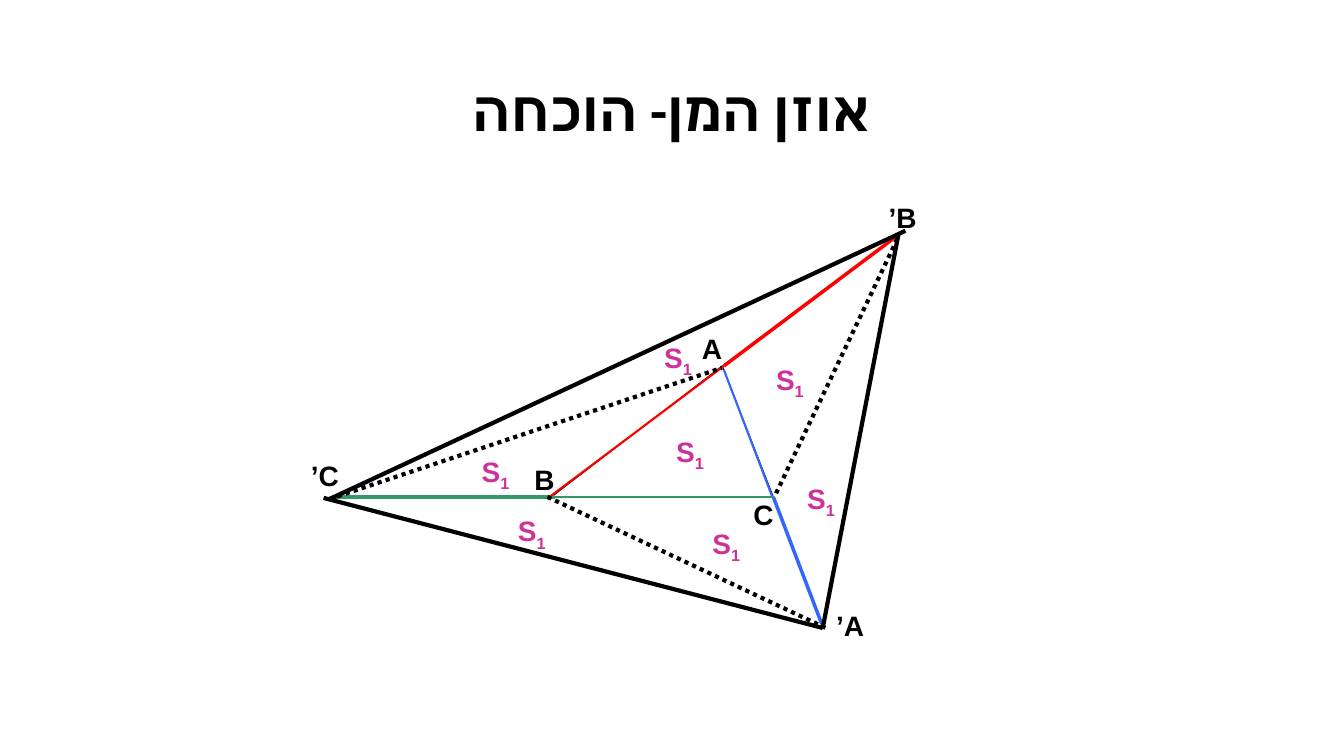
from lxml import etree
from pptx import Presentation
from pptx.dml.color import RGBColor
from pptx.enum.dml import MSO_LINE
from pptx.enum.shapes import MSO_CONNECTOR, MSO_SHAPE
from pptx.enum.text import MSO_ANCHOR, MSO_AUTO_SIZE, PP_ALIGN
from pptx.oxml.ns import qn
from pptx.util import Inches, Pt

BLACK = RGBColor(0x00, 0x00, 0x00)
RED = RGBColor(0xFF, 0x00, 0x00)
BLUE = RGBColor(0x33, 0x66, 0xFF)
GREEN = RGBColor(0x33, 0x99, 0x66)
MAGENTA = RGBColor(0xCC, 0x33, 0x99)

STRAIGHT = MSO_CONNECTOR.STRAIGHT
TRIANGLE = MSO_SHAPE.ISOSCELES_TRIANGLE
DOTTED = MSO_LINE.ROUND_DOT
MIDDLE, TOP = MSO_ANCHOR.MIDDLE, MSO_ANCHOR.TOP
CENTER, RIGHT = PP_ALIGN.CENTER, PP_ALIGN.RIGHT
GROW, FIXED = MSO_AUTO_SIZE.SHAPE_TO_FIT_TEXT, MSO_AUTO_SIZE.NONE

WIDTH, HEIGHT = Inches(13.33), Inches(7.5)
COLUMNS, ROWS = 133.3, 75
LABEL_SIZE = (5.5, 4.3)

# Each line: start, end, colour, weight
SOLID_LINES = [
    ((76.7, 49.3), (81.5, 61.9), BLUE, 2.5),
    ((33, 49.3), (55, 49.3), GREEN, 2.5),
    ((71.8, 36.3), (89.1, 23.3), RED, 2.5),
    ((89.1, 23.3), (81.6, 62.3), BLACK, 3),
    ((89.8, 22.9), (32.7, 49.5), BLACK, 3),
    ((32.1, 49.4), (81.6, 62.3), BLACK, 3),
    ((54.5, 49.3), (71.8, 36.3), RED, 1.5),
    ((71.8, 36.7), (76.6, 49.3), BLUE, 1.5),
    ((54.7, 49.3), (76.8, 49.3), GREEN, 1.5),
]
DOTTED_LINES = [
    ((89, 23.7), (76.8, 49.3)),
    ((54.3, 49.3), (81.9, 62.3)),
    ((32.7, 49.5), (71.6, 36.5)),
]
VERTEX_LABELS = {
    "A": (67.1, 32.4), "B": (50.5, 45.4), "C": (72.2, 48.9),
    "B’": (86.4, 19.4), "C’": (29.1, 45), "A’": (81.2, 59.9),
}
AREA_LABELS = [(75.2, 35.5), (65.3, 42.6), (68.9, 51.7), (49.6, 50.5),
               (78.3, 47.3), (46, 44.6), (64.1, 33.3)]


class ProofSlide:
    """Places elements on a grid of COLUMNS by ROWS."""

    def __init__(self, presentation):
        self.slide = presentation.slides.add_slide(presentation.slide_layouts[6])
        self.label_font, self.title_font = "Arial", "Calibri"

    def cells(self, column, row):
        return round(WIDTH * column / COLUMNS), round(HEIGHT * row / ROWS)

    def line(self, start, end, color, weight, dash=None):
        connector = self.slide.shapes.add_connector(
            STRAIGHT, *self.cells(*start), *self.cells(*end))
        connector.line.color.rgb = color
        connector.line.width = Pt(weight)
        if dash:
            connector.line.dash_style = dash
        etree.SubElement(connector._element.spPr, qn("a:effectLst"))

    def triangle(self, position, size, apex):
        shape = self.slide.shapes.add_shape(
            TRIANGLE, *self.cells(*position), *self.cells(*size))
        shape.adjustments[0] = apex
        shape.shadow.inherit = False
        shape.fill.background()
        shape.line.color.rgb = BLACK
        shape.line.width = Pt(0.75)

    def text(self, position, size, words, color, font, points, align, anchor, fit):
        """Adds bold right-to-left text and returns its paragraph."""
        box = self.slide.shapes.add_textbox(*self.cells(*position), *self.cells(*size))
        frame = box.text_frame
        frame.word_wrap = True
        frame.auto_size = fit
        frame.vertical_anchor = anchor
        paragraph = frame.paragraphs[0]
        paragraph.add_run().text = words
        paragraph.alignment = align
        paragraph.font.name = font
        paragraph.font.size = Pt(points)
        paragraph.font.bold = True
        paragraph.font.color.rgb = color
        properties = paragraph._p.get_or_add_pPr()
        properties.set("rtl", "1")
        complex_script = etree.SubElement(properties.find(qn("a:defRPr")), qn("a:cs"))
        complex_script.set("typeface", font)
        return paragraph

    def title(self, words):
        paragraph = self.text((9.2, 4), (115, 14.5), words, BLACK,
                              self.title_font, 40, CENTER, MIDDLE, FIXED)
        paragraph.line_spacing = 0.9

    def label(self, position, words, color, subscript=None):
        paragraph = self.text(position, LABEL_SIZE, words, color,
                              self.label_font, 20, RIGHT, TOP, GROW)
        if subscript:
            run = paragraph.add_run()
            run.text = subscript
            run._r.get_or_add_rPr().set("baseline", "-25000")


def main():
    presentation = Presentation()
    presentation.slide_width, presentation.slide_height = WIDTH, HEIGHT
    proof = ProofSlide(presentation)
    proof.title("אוזן המן- הוכחה")
    proof.triangle((54.7, 36.3), (22, 13), 0.77)
    for start, end, color, weight in SOLID_LINES:
        proof.line(start, end, color, weight)
    for start, end in DOTTED_LINES:
        proof.line(start, end, BLACK, 3, DOTTED)
    for name, position in VERTEX_LABELS.items():
        proof.label(position, name, BLACK)
    for position in AREA_LABELS:
        proof.label(position, "S", MAGENTA, "1")
    presentation.save("out.pptx")


if __name__ == "__main__":
    main()
